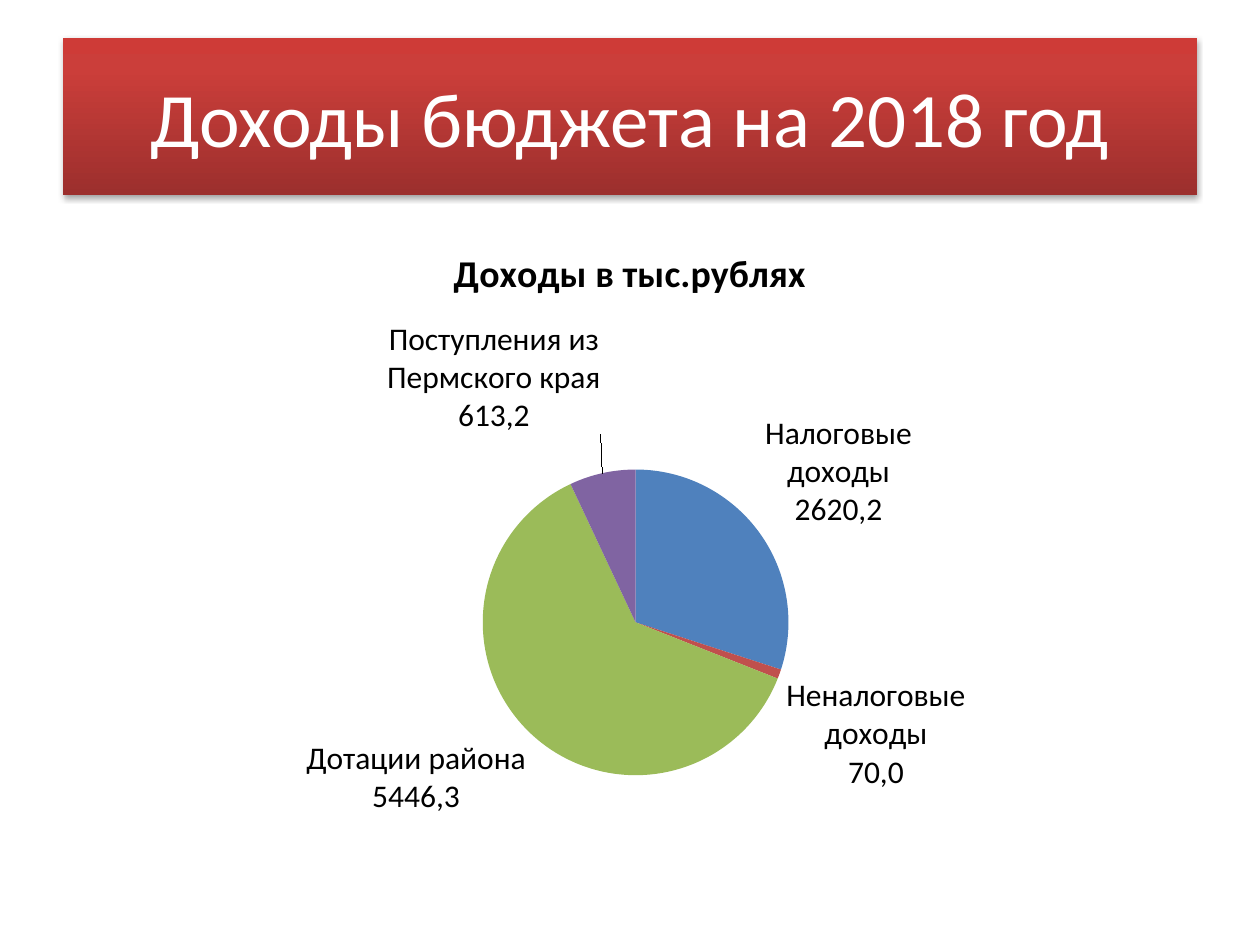
from copy import deepcopy

from pptx import Presentation
from pptx import util as u
from pptx.chart.data import CategoryChartData
from pptx.dml.color import RGBColor
from pptx.enum import chart as charts, shapes, text
from pptx.oxml import parse_xml
from pptx.oxml.ns import nsdecls, qn

EMU_PER_PX = 914400 // 126
FONT = "Calibri"
WHITE = RGBColor(0xFF, 0xFF, 0xFF)
BLACK = RGBColor(0, 0, 0)
BLUE = RGBColor(0x4F, 0x81, 0xBD)
RED = RGBColor(0xC0, 0x50, 0x4D)
GREEN = RGBColor(0x9B, 0xBB, 0x59)
PURPLE = RGBColor(0x80, 0x64, 0xA2)
BANNER_STOPS = [
    (0, RGBColor(0x9C, 0x2F, 0x2D)),
    (0.8, RGBColor(0xCB, 0x3E, 0x3A)),
    (1, RGBColor(0xCE, 0x3B, 0x37)),
]
INCOME = [
    ("Налоговые доходы", 30, "2620,2", BLUE),
    ("Неналоговые доходы", 1, "70,0", RED),
    ("Дотации района", 62, "5446,3", GREEN),
    ("Поступления из Пермского края", 7, "613,2", PURPLE),
]


def px(value):
    return u.Emu(value * EMU_PER_PX)


def manual_layout(**values):
    entries = "".join(f'<c:{name} val="{value}"/>' for name, value in values.items())
    return parse_xml(
        f'<c:layout {nsdecls("c")}><c:manualLayout>{entries}</c:manualLayout></c:layout>'
    )


class SlideBuilder:
    def __init__(self, slide):
        self.slide = slide

    def style(self, font, size, color, bold=False):
        font.color.rgb = color
        for name, value in {"name": FONT, "size": u.Pt(size), "bold": bold}.items():
            setattr(font, name, value)

    def banner(self, wording, left, top, width, height):
        shape = self.slide.shapes.add_shape(
            shapes.MSO_SHAPE.RECTANGLE, px(left), px(top), px(width), px(height)
        )
        shape.line.fill.background()
        shape.fill.gradient()
        stop_list = next(shape.element.iter(qn("a:gsLst")))
        stop_list.append(deepcopy(stop_list[-1]))
        for stop, (position, color) in zip(shape.fill.gradient_stops, BANNER_STOPS):
            stop.position = position
            stop.color.rgb = color
        shape.fill.gradient_angle = 90
        shape.shadow.inherit = False
        effects = next(shape.element.iter(qn("a:effectLst")))
        effects.append(parse_xml(
            f'<a:outerShdw {nsdecls("a")} blurRad="40000" dist="23000" dir="5400000" '
            'rotWithShape="0"><a:srgbClr val="000000"><a:alpha val="35000"/>'
            '</a:srgbClr></a:outerShdw>'
        ))
        frame = shape.text_frame
        frame.word_wrap = True
        frame.vertical_anchor = text.MSO_ANCHOR.MIDDLE
        paragraph = frame.paragraphs[0]
        paragraph.alignment = text.PP_ALIGN.CENTER
        run = paragraph.add_run()
        run.text = wording
        self.style(run.font, 44, WHITE)

    def pie(self, title, rows, left, top, width, height):
        data = CategoryChartData()
        data.categories = [row[0] for row in rows]
        data.add_series(title, [row[1] for row in rows])
        chart = self.slide.shapes.add_chart(
            charts.XL_CHART_TYPE.PIE, px(left), px(top), px(width), px(height), data
        ).chart
        self.style(chart.font, 18, BLACK)
        chart.has_legend = False
        chart.has_title = True
        chart.chart_title.text_frame.text = title
        title_run = chart.chart_title.text_frame.paragraphs[0].runs[0]
        self.style(title_run.font, 21.6, BLACK, bold=True)
        plot = chart.plots[0]
        plot.vary_by_categories = True
        for index, (category, _, amount, color) in enumerate(rows):
            point = plot.series[0].points[index]
            point.format.fill.solid()
            point.format.fill.fore_color.rgb = color
            label = point.data_label
            label.text_frame.text = f"{category}\n{amount}"
            label.position = charts.XL_LABEL_POSITION.OUTSIDE_END
            for paragraph in label.text_frame.paragraphs:
                self.style(paragraph.runs[0].font, 18, BLACK)
        last_label = list(chart.element.iter(qn("c:dLbl")))[-1]
        last_label.insert(1, manual_layout(x=0, y=-0.05))
        plot_area = next(chart.element.iter(qn("c:plotArea")))
        for old_layout in plot_area.findall(qn("c:layout")):
            plot_area.remove(old_layout)
        plot_area.insert(0, manual_layout(
            layoutTarget="inner", xMode="edge", yMode="edge",
            x=0.37, y=0.4, w=0.27, h=0.49,
        ))


def main():
    presentation = Presentation()
    presentation.slide_width = u.Inches(10)
    presentation.slide_height = u.Inches(7.5)
    slide = presentation.slides.add_slide(presentation.slide_layouts[6])
    builder = SlideBuilder(slide)
    builder.banner("Доходы бюджета на 2018 год", 63, 38, 1134, 157)
    builder.pie("Доходы в тыс.рублях", INCOME, 63, 220, 1134, 624)
    presentation.save("out.pptx")


if __name__ == "__main__":
    main()
